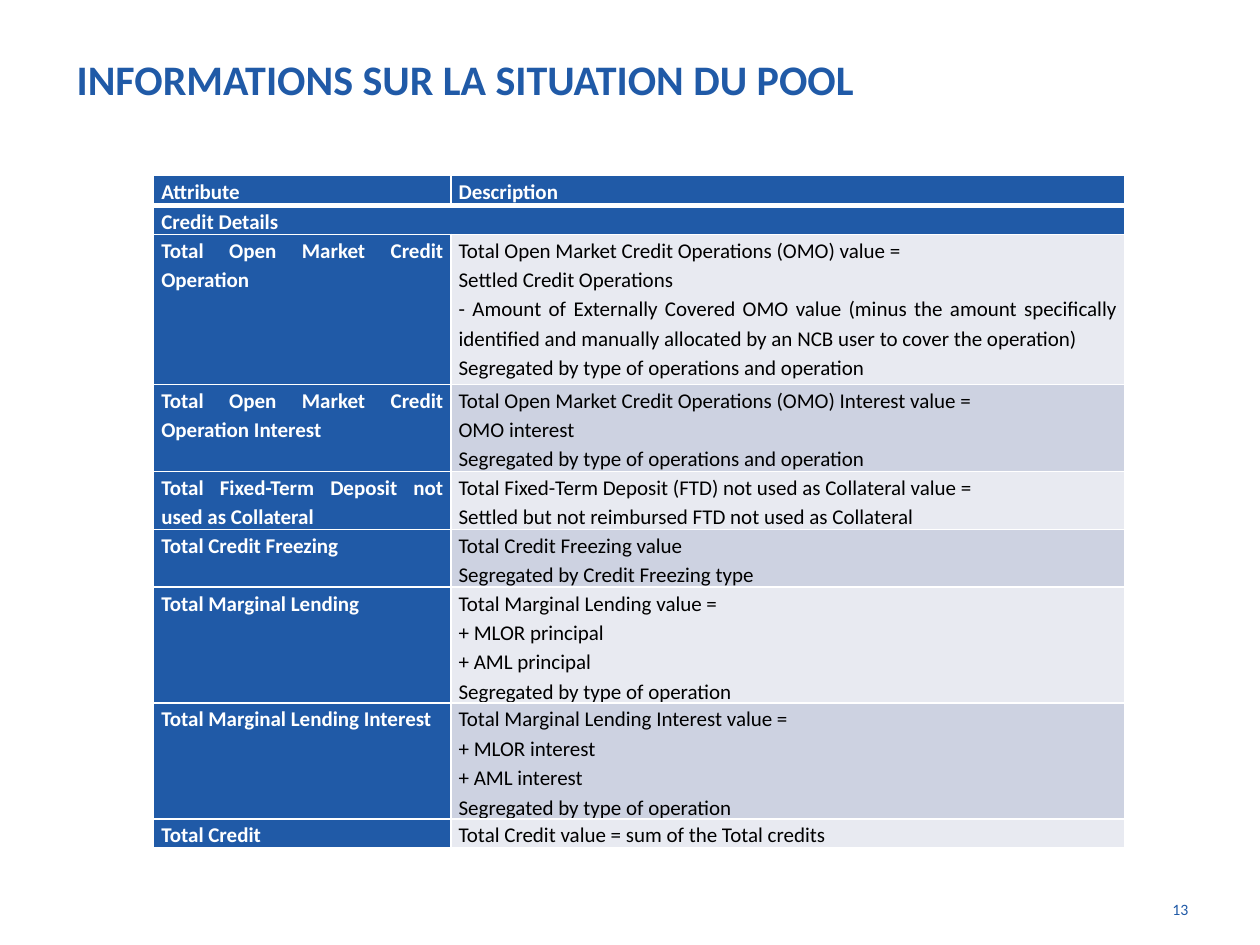
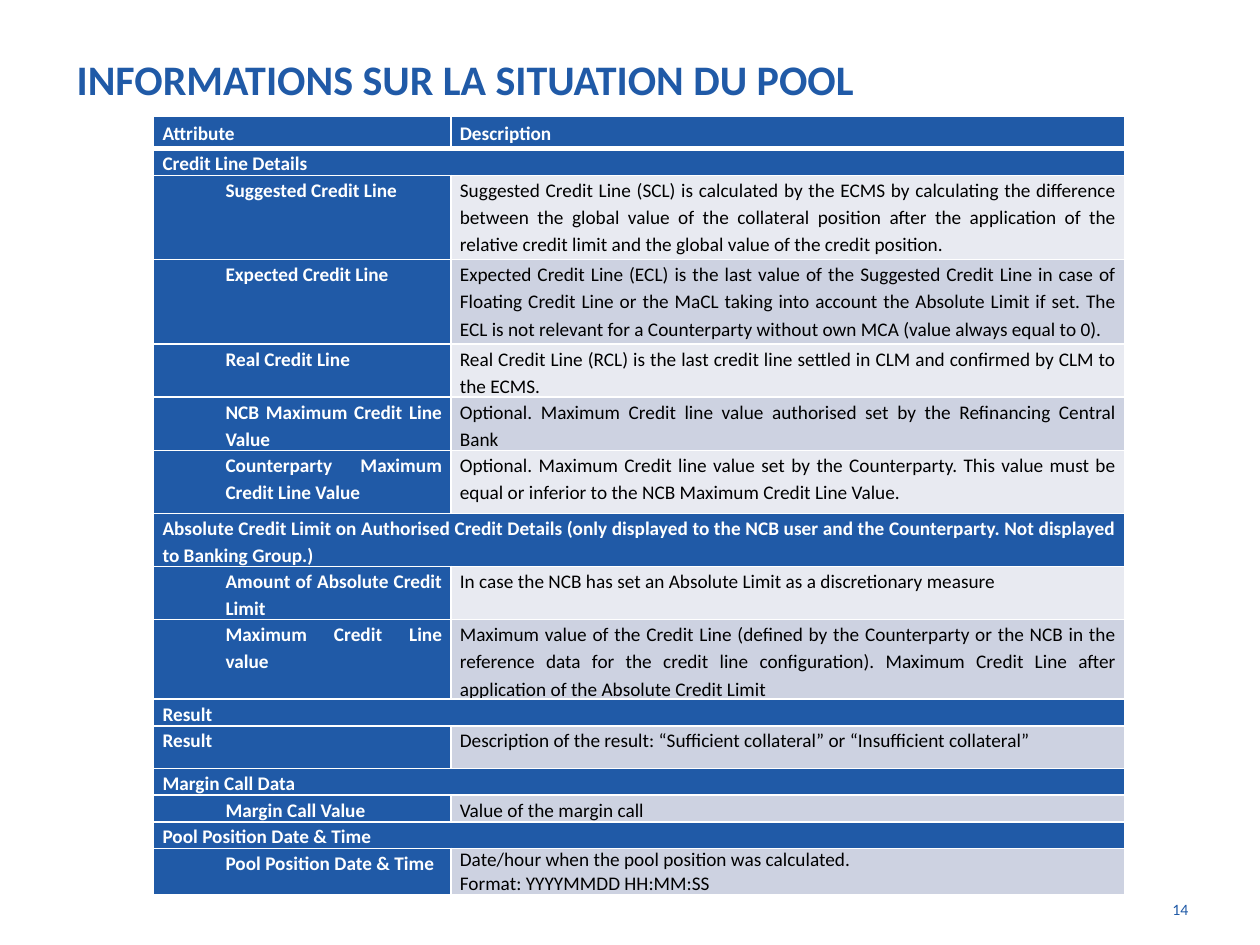
"""Build two slides describing the attributes of the pool situation."""
from dataclasses import dataclass

from lxml import etree
from pptx import Presentation
from pptx.dml.color import RGBColor
from pptx.enum.text import MSO_ANCHOR, PP_ALIGN
from pptx.oxml.ns import qn
from pptx.util import Inches, Pt

LEFT, RIGHT, JUSTIFY = PP_ALIGN.LEFT, PP_ALIGN.RIGHT, PP_ALIGN.JUSTIFY
TOP, MIDDLE = MSO_ANCHOR.TOP, MSO_ANCHOR.MIDDLE


@dataclass(frozen=True)
class Theme:
    """Colours, type sizes and line widths shared by the slides."""
    font: str = "Calibri"
    blue: str = "205AA7"
    white: str = "FFFFFF"
    black: str = "000000"
    stripes: tuple = ("E8EAF1", "CDD2E1")
    title_size: float = 24
    number_size: float = 9
    border: float = 1
    header_border: float = 3
    line_spacing: float = 1.15


@dataclass(frozen=True)
class TableLayout:
    """Placement and text settings of one table."""
    top: float
    height: float
    size: float
    inset: float
    space_after: float
    header_height: float


@dataclass(frozen=True)
class Row:
    """A table row; without description it is a full-width section."""
    height: float
    label: str
    description: tuple = ()
    indent: float = 0
    compact: bool = False


THEME = Theme()
TITLE = "INFORMATIONS SUR LA SITUATION DU POOL"
HEADERS = ("Attribute", "Description")
TABLE_LEFT = 1.22
COLUMN_WIDTHS = (2.36, 5.35)
INDENT = 0.5

CREDIT_LAYOUT = TableLayout(1.39, 5.34, 12, 0.06, 0, 0.24)
CREDIT_ROWS = (
    Row(0.15, "Credit Details"),
    Row(1.19, "Total Open Market Credit Operation", (
        "Total Open Market Credit Operations (OMO) value =",
        "Settled Credit Operations",
        "- Amount of Externally Covered OMO value (minus the amount specifically "
        "identified and manually allocated by an NCB user to cover the operation)",
        "Segregated by type of operations and operation")),
    Row(0.64, "Total Open Market Credit Operation Interest", (
        "Total Open Market Credit Operations (OMO) Interest value =",
        "OMO interest",
        "Segregated by type of operations and operation")),
    Row(0.4, "Total Fixed-Term Deposit not used as Collateral", (
        "Total Fixed-Term Deposit (FTD) not used as Collateral value =",
        "Settled but not reimbursed FTD not used as Collateral")),
    Row(0.4, "Total Credit Freezing", (
        "Total Credit Freezing value",
        "Segregated by Credit Freezing type")),
    Row(0.89, "Total Marginal Lending", (
        "Total Marginal Lending value =",
        "+ MLOR principal",
        "+ AML principal",
        "Segregated by type of operation")),
    Row(0.89, "Total Marginal Lending Interest", (
        "Total Marginal Lending Interest value =",
        "+ MLOR interest",
        "+ AML interest",
        "Segregated by type of operation")),
    Row(0.15, "Total Credit", ("Total Credit value = sum of the Total credits",)),
)

CREDIT_LINE_LAYOUT = TableLayout(0.92, 6.18, 11, 0.07, 8, 0.26)
CREDIT_LINE_ROWS = (
    Row(0.17, "Credit Line Details"),
    Row(0.67, "Suggested Credit Line", (
        "Suggested Credit Line (SCL) is calculated by the ECMS by calculating the "
        "difference between the global value of the collateral position after the "
        "application of the relative credit limit and the global value of the credit "
        "position.",), INDENT),
    Row(0.67, "Expected Credit Line", (
        "Expected Credit Line (ECL) is the last value of the Suggested Credit Line in "
        "case of Floating Credit Line or the MaCL taking into account the Absolute "
        "Limit if set. The ECL is not relevant for a Counterparty without own MCA "
        "(value always equal to 0).",), INDENT),
    Row(0.34, "Real Credit Line", (
        "Real Credit Line (RCL) is the last credit line settled in CLM and confirmed "
        "by CLM to the ECMS.",), INDENT),
    Row(0.34, "NCB Maximum Credit Line Value", (
        "Optional. Maximum Credit line value authorised set by the Refinancing "
        "Central Bank",), INDENT),
    Row(0.5, "Counterparty Maximum Credit Line Value", (
        "Optional. Maximum Credit line value set by the Counterparty. This value must "
        "be equal or inferior to the NCB Maximum Credit Line Value.",), INDENT),
    Row(0.34, "Absolute Credit Limit on Authorised Credit Details (only displayed to "
        "the NCB user and the Counterparty. Not displayed to Banking Group.)"),
    Row(0.34, "Amount of Absolute Credit Limit", (
        "In case the NCB has set an Absolute Limit as a discretionary measure",), INDENT),
    Row(0.5, "Maximum Credit Line value", (
        "Maximum value of the Credit Line (defined by the Counterparty or the NCB in "
        "the reference data for the credit line configuration). Maximum Credit Line "
        "after application of the Absolute Credit Limit",), INDENT),
    Row(0.17, "Result"),
    Row(0.34, "Result", (
        "Description of the result: “Sufficient collateral” or “Insufficient "
        "collateral”",)),
    Row(0.17, "Margin Call Data"),
    Row(0.05, "Margin Call Value", ("Value of the margin call",), INDENT),
    Row(0.17, "Pool Position Date & Time"),
    Row(0.27, "Pool Position Date & Time", (
        "Date/hour when the pool position was calculated.",
        "Format: YYYYMMDD HH:MM:SS"), INDENT, compact=True),
)


def add_run(paragraph, text, size, colour, bold=False):
    """Add one formatted run to a paragraph."""
    run = paragraph.add_run()
    run.text = text
    run.font.name = THEME.font
    run.font.size = Pt(size)
    run.font.bold = bold
    run.font.color.rgb = RGBColor.from_string(colour)


def add_text(slide, box, text, size, anchor=TOP, alignment=LEFT, bold=False):
    """Add a one-paragraph blue text box."""
    frame = slide.shapes.add_textbox(*map(Inches, box)).text_frame
    frame.word_wrap = True
    frame.vertical_anchor = anchor
    paragraph = frame.paragraphs[0]
    paragraph.alignment = alignment
    add_run(paragraph, text, size, THEME.blue, bold)


def set_border(cell, side, width):
    """Draw one white cell border."""
    line = etree.SubElement(cell._tc.get_or_add_tcPr(), qn(f"a:ln{side}"), w=str(Pt(width)))
    fill = etree.SubElement(line, qn("a:solidFill"))
    etree.SubElement(fill, qn("a:srgbClr"), val=THEME.white)


def style_cell(cell, colour, layout, top_border, bottom_border):
    """Set the borders, fill and margins of a cell."""
    widths = {"L": THEME.border, "R": THEME.border, "T": top_border, "B": bottom_border}
    for side, width in widths.items():
        set_border(cell, side, width)
    cell.fill.solid()
    cell.fill.fore_color.rgb = RGBColor.from_string(colour)
    cell.margin_left = cell.margin_right = Inches(layout.inset)
    cell.margin_top = cell.margin_bottom = 0


def write_cell(cell, lines, layout, colour, bold=True, alignment=JUSTIFY, indent=0,
               compact=False):
    """Write one paragraph per line into a cell."""
    frame = cell.text_frame
    for index, line in enumerate(lines):
        paragraph = frame.add_paragraph() if index else frame.paragraphs[0]
        paragraph.alignment = LEFT if compact else alignment
        if not compact:
            paragraph.line_spacing = THEME.line_spacing
            paragraph.space_after = Pt(layout.space_after)
        if indent:
            properties = paragraph._p.get_or_add_pPr()
            properties.set("marL", str(Inches(indent)))
            properties.set("indent", "0")
        add_run(paragraph, line, layout.size, colour, bold)


def fill_header(table, layout):
    """Fill the header row."""
    table.rows[0].height = Inches(layout.header_height)
    for cell, text in zip(table.rows[0].cells, HEADERS):
        style_cell(cell, THEME.blue, layout, THEME.border, THEME.header_border)
        cell.vertical_anchor = MIDDLE
        write_cell(cell, (text,), layout, THEME.white, alignment=LEFT)


def fill_row(table, index, row, layout):
    """Fill a section row or an attribute row."""
    table.rows[index].height = Inches(row.height)
    label, description = table.rows[index].cells
    stripe = THEME.stripes[index % 2] if row.description else THEME.blue
    top_border = THEME.header_border if index == 1 else THEME.border
    for cell, colour in ((label, THEME.blue), (description, stripe)):
        style_cell(cell, colour, layout, top_border, THEME.border)
    write_cell(label, (row.label,), layout, THEME.white, indent=row.indent)
    if row.description:
        write_cell(description, row.description, layout, THEME.black, bold=False,
                   compact=row.compact)
    else:
        label.merge(description)


def add_attribute_table(slide, rows, layout):
    """Add the attribute table with its header."""
    box = (TABLE_LEFT, layout.top, sum(COLUMN_WIDTHS), layout.height)
    graphic = slide.shapes.add_table(len(rows) + 1, len(COLUMN_WIDTHS), *map(Inches, box))
    table = graphic.table
    table.horz_banding = False
    for column, width in zip(table.columns, COLUMN_WIDTHS):
        column.width = Inches(width)
    fill_header(table, layout)
    for index, row in enumerate(rows, start=1):
        fill_row(table, index, row, layout)
    graphic.height = Inches(layout.height)


def add_pool_slide(presentation, number, rows, layout):
    """Add a slide with title, page number and table."""
    slide = presentation.slides.add_slide(presentation.slide_layouts[6])
    add_text(slide, (0.51, 0, 9, 1.25), TITLE, THEME.title_size, anchor=MIDDLE, bold=True)
    add_text(slide, (8.94, 7.09, 0.59, 0.39), str(number), THEME.number_size,
             alignment=RIGHT)
    add_attribute_table(slide, rows, layout)


def main():
    """Build and save the presentation."""
    presentation = Presentation()
    presentation.slide_width = Inches(10)
    presentation.slide_height = Inches(7.5)
    add_pool_slide(presentation, 13, CREDIT_ROWS, CREDIT_LAYOUT)
    add_pool_slide(presentation, 14, CREDIT_LINE_ROWS, CREDIT_LINE_LAYOUT)
    presentation.save("out.pptx")


if __name__ == "__main__":
    main()
